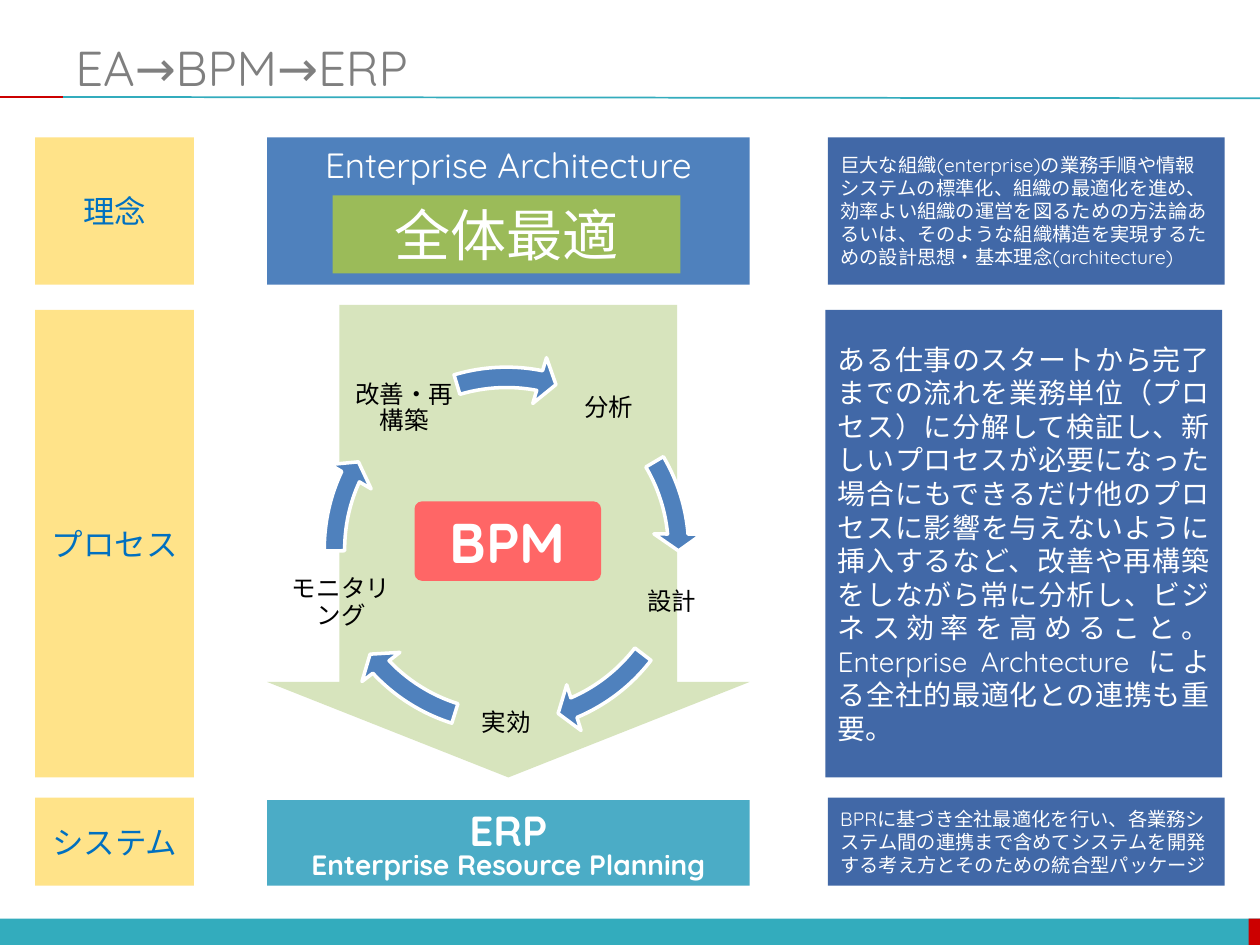
import math

from lxml import etree
from pptx import Presentation
from pptx.dml import color
from pptx.enum import shapes, text
from pptx.oxml import ns
from pptx.util import Inches, Pt

FONT = "Quicksand"
WHITE, TEAL, RED, BLUE = "FFFFFF", "33ACBD", "CC0000", "4F81BD"
KIND = shapes.MSO_SHAPE
MIDDLE, TOP = text.MSO_ANCHOR.MIDDLE, text.MSO_ANCHOR.TOP
LEFT, CENTER, JUSTIFY = text.PP_ALIGN.LEFT, text.PP_ALIGN.CENTER, text.PP_ALIGN.JUSTIFY

LABEL_X, LABEL_W = 0.28, 1.26
MAIN_X, MAIN_W = 2.12, 3.83
NOTE_W = 3.15

ARCHITECTURE_NOTE = (
    "巨大な組織(enterprise)の業務手順や情報システムの標準化、組織の最適化を進め、"
    "効率よい組織の運営を図るための方法論あるいは、そのような組織構造を実現するための"
    "設計思想・基本理念(architecture)"
)
PROCESS_NOTE = (
    "ある仕事のスタートから完了までの流れを業務単位（プロセス）に分解して検証し、"
    "新しいプロセスが必要になった場合にもできるだけ他のプロセスに影響を与えないように"
    "挿入するなど、改善や再構築をしながら常に分析し、ビジネス効率を高めること。"
    "Enterprise Archtecture による全社的最適化との連携も重要。"
)
SYSTEM_NOTE = (
    "BPRに基づき全社最適化を行い、各業務システム間の連携まで含めてシステムを開発する"
    "考え方とそのための統合型パッケージ"
)

# Label, swing start and end of the arrow that follows it
CYCLE = [
    ("分析", 212.95, 197.65),
    ("設計", 40.16, 22.52),
    ("実効", 82.12, 64.48),
    ("モニタリング", 122.99, 107.7),
    ("改善・再構築", 168.67, 151.97),
]


def rgb(value):
    return color.RGBColor.from_string(value)


def inches(box):
    return [Inches(v) for v in box]


def write(sp, content, size, hue=WHITE, align=CENTER, anchor=MIDDLE, inset=None, para=None, **font):
    """Fill a shape with one paragraph and return that paragraph."""
    tf = sp.text_frame
    frame = {"word_wrap": True, "vertical_anchor": anchor}
    if inset is not None:
        frame.update({f"margin_{side}": Inches(inset) for side in ("left", "top", "right", "bottom")})
    for name, value in frame.items():
        setattr(tf, name, value)
    p = para or tf.paragraphs[0]
    p.alignment = align
    r = p.add_run()
    r.text = content
    for name, value in {"size": Pt(size), "name": FONT, **font}.items():
        setattr(r.font, name, value)
    r.font.color.rgb = rgb(hue)
    return p


def add_block(s, box, fill, kind=KIND.RECTANGLE, adjust=(), outline=None):
    sp = s.shapes.add_shape(kind, *inches(box))
    sp.shadow.inherit = False
    sp.fill.solid()
    sp.fill.fore_color.rgb = rgb(fill)
    for i, value in enumerate(adjust):
        sp.adjustments[i] = value
    if outline:
        sp.line.color.rgb = rgb(outline)
        sp.line.width = Pt(2)
    else:
        sp.line.fill.background()
    return sp


def add_rule(s, start, end, hue):
    line = s.shapes.add_connector(shapes.MSO_CONNECTOR.STRAIGHT, *inches(start + end))
    line.line.color.rgb = rgb(hue)
    line.line.width = Pt(1)
    etree.SubElement(line._element.spPr, ns.qn("a:effectLst"))


def add_frame(s):
    """Title, the rule under it and the footer band."""
    add_block(s, (0, 7.29, 10, 0.21), TEAL)
    add_block(s, (9.91, 7.29, 0.09, 0.21), RED)
    add_rule(s, (0.5, 0.77), (10, 0.78), TEAL)
    add_rule(s, (0, 0.77), (0.5, 0.77), RED)
    title = s.shapes.add_textbox(*inches((0.5, 0.3, 9.5, 0.46)))
    write(title, "EA→BPM→ERP", 28, "7F7F7F", LEFT)


def add_row_text(s, y, h, label, note, size, note_x, align=LEFT):
    """Yellow label on the left and blue explanation on the right of a row."""
    write(add_block(s, (LABEL_X, y, LABEL_W, h), "FFE389"), label, 18, "0070C0")
    write(add_block(s, (note_x, y, NOTE_W, h), "4168A7"), note, size, align=align)


def add_architecture(s, x, y, w, h):
    write(add_block(s, (x, y, w, h), BLUE), "Enterprise Architecture", 20, anchor=TOP)
    goal = add_block(s, (x + 0.52, y + 0.46, 2.76, 0.62), "9BBB59")
    write(goal, "全体最適", 32)


def add_process(s, x, y, w, h):
    """Down arrow with the five-step cycle around BPM."""
    add_block(s, (x, y, w, h), "D7E4BD", KIND.DOWN_ARROW, (0.7, 0.202))
    cx, cy = x + 1.9, y + 1.94
    ring, radius, side = 3.11, 1.38, 0.83
    for i, (label, start, end) in enumerate(CYCLE):
        angle = math.radians(72 * i - 54)
        left = cx + radius * math.cos(angle) - side / 2
        top = cy + radius * math.sin(angle) - side / 2
        tb = s.shapes.add_textbox(*inches((left, top, side, side)))
        write(tb, label, 14, "000000", inset=0.02).line_spacing = 0.9
        add_block(s, (cx - ring / 2, cy - ring / 2, ring, ring), BLUE, KIND.CIRCULAR_ARROW,
                  (0.052, 3.356, start, end, 0.061), WHITE)
    hub = add_block(s, (x + 1.17, y + 1.56, 1.48, 0.63), "FF6666", KIND.ROUNDED_RECTANGLE, (0.091,))
    write(hub, "BPM", 32, bold=True)


def add_system(s, x, y, w, h):
    sp = add_block(s, (x, y, w, h), "4BACC6")
    write(sp, "ERP", 24, bold=True)
    p = write(sp, "Enterprise Resource Planning", 16, para=sp.text_frame.add_paragraph(), bold=True)
    p.line_spacing = Pt(12)
    p.space_before = Pt(3.2)


def main():
    prs = Presentation()
    prs.slide_width, prs.slide_height = Inches(10), Inches(7.5)
    s = prs.slides.add_slide(prs.slide_layouts[6])
    add_frame(s)
    add_process(s, MAIN_X, 2.42, MAIN_W, 3.75)
    add_architecture(s, MAIN_X, 1.09, MAIN_W, 1.17)
    add_system(s, MAIN_X, 6.35, MAIN_W, 0.68)
    add_row_text(s, 1.09, 1.17, "理念", ARCHITECTURE_NOTE, 11, 6.57)
    add_row_text(s, 2.46, 3.71, "プロセス", PROCESS_NOTE, 16, 6.55, JUSTIFY)
    add_row_text(s, 6.33, 0.7, "システム", SYSTEM_NOTE, 11, 6.57)
    prs.save("out.pptx")


if __name__ == "__main__":
    main()
